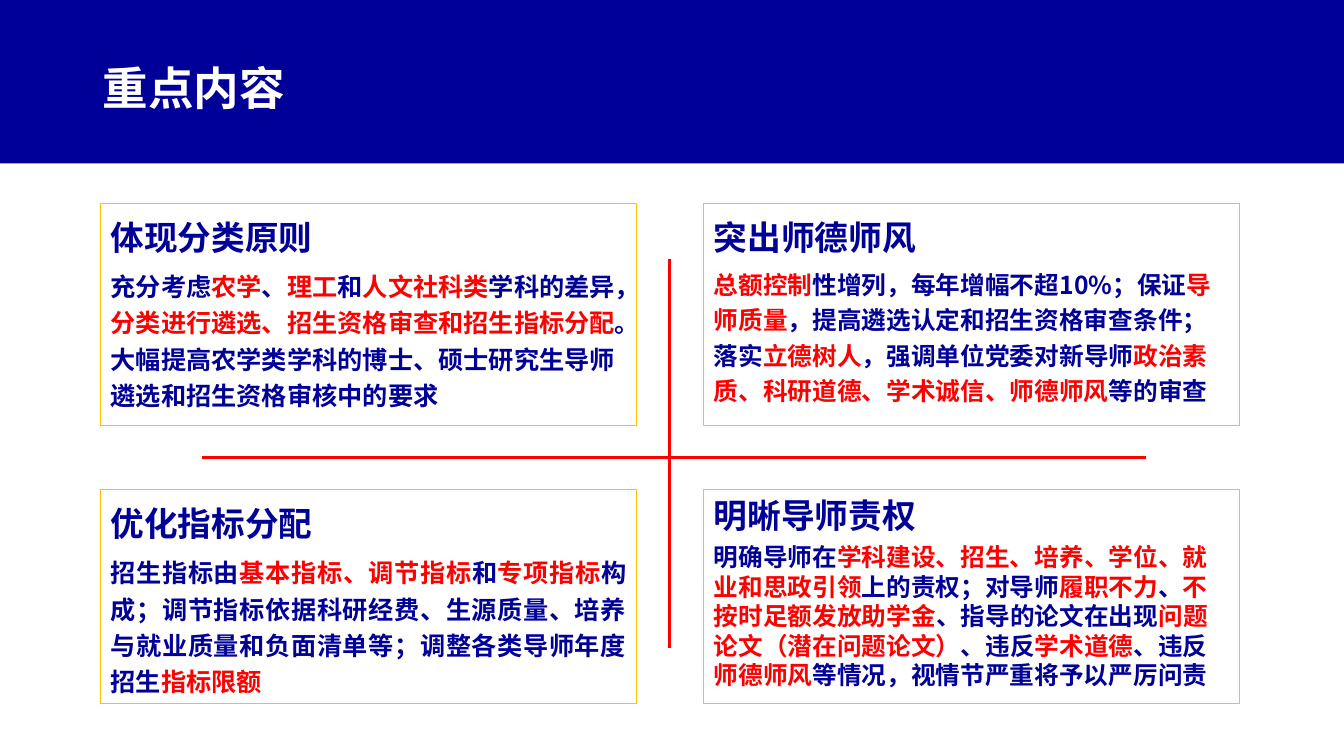
from dataclasses import dataclass

from lxml import etree
from pptx import Presentation
from pptx.dml.color import RGBColor
from pptx.enum.shapes import MSO_CONNECTOR, MSO_SHAPE
from pptx.enum.text import MSO_ANCHOR, PP_ALIGN
from pptx.oxml.ns import qn
from pptx.slide import Slide
from pptx.text.text import TextFrame, _Paragraph as Paragraph
from pptx.util import Inches, Pt

FONT = "Noto Sans CJK SC"
NAVY = RGBColor(0x00, 0x00, 0x99)
RED = RGBColor(0xFF, 0x00, 0x00)
GOLD = RGBColor(0xFF, 0xC0, 0x00)
WHITE = RGBColor(0xFF, 0xFF, 0xFF)

COLUMNS = (1, 6.98)
ROWS = ((2.02, 2.2), (4.86, 2.12))  # top, height
PANEL_WIDTH = 5.31


@dataclass(frozen=True)
class Panel:
    column: int
    row: int
    heading: str
    body: str  # "|" switches between navy and red, navy first
    heading_size: float = 24
    body_size: float = 18
    body_gap: float = 6
    line_spacing: float = 1.2
    align: PP_ALIGN = PP_ALIGN.LEFT


@dataclass(frozen=True)
class Axis:
    start: tuple[float, float]
    end: tuple[float, float]


PANELS = (
    Panel(0, 0, "体现分类原则",
          "充分考虑|农学|、|理工|和|人文社科类|学科的差异，|"
          "分类进行遴选、招生资格审查和招生指标分配|"
          "。大幅提高农学类学科的博士、硕士研究生导师遴选和招生资格审核中的要求"),
    Panel(1, 0, "突出师德师风",
          "|总额控制|性增列，每年增幅不超10%；保证|导师质量|"
          "，提高遴选认定和招生资格审查条件；落实|立德树人|，强调单位党委对新导师|"
          "政治素质、科研道德、学术诚信、师德师风|等的审查",
          heading_size=24.1, body_size=17.6, body_gap=4.8),
    Panel(0, 1, "优化指标分配",
          "招生指标由|基本指标、调节指标|和|专项指标|"
          "构成；调节指标依据科研经费、生源质量、培养与就业质量和负面清单等；"
          "调整各类导师年度招生|指标限额",
          align=PP_ALIGN.JUSTIFY),
    Panel(1, 1, "明晰导师责权",
          "明确导师在|学科建设、招生、培养、学位、就业和思政引领|上的责权；对导师|"
          "履职不力|、|不按时足额发放助学金|、指导的论文在出现|"
          "问题论文（潜在问题论文）|、违反|学术道德|、违反|师德师风|"
          "等情况，视情节严重将予以严厉问责",
          heading_size=24.1, body_size=17.6, body_gap=4.8, line_spacing=1.0),
)

AXES = (
    Axis((6.64, 2.57), (6.64, 6.43)),
    Axis((2, 4.54), (11.37, 4.54)),
)


def apply(target: object, values: dict) -> None:
    for name, value in values.items():
        setattr(target, name, value)


def add_run(paragraph: Paragraph, text: str, size: float, color: RGBColor) -> None:
    run = paragraph.add_run()
    run.text = text
    apply(run.font, {"name": FONT, "size": Pt(size), "bold": True})
    run.font.color.rgb = color
    east_asian = etree.SubElement(run.font._element, qn("a:ea"))
    east_asian.set("typeface", FONT)


def add_marked_text(paragraph: Paragraph, marked: str, size: float) -> None:
    """Write the "|"-separated parts in alternating navy and red."""
    for index, part in enumerate(marked.split("|")):
        if part:
            add_run(paragraph, part, size, RED if index % 2 else NAVY)


def add_banner(slide: Slide, title: str) -> None:
    band = slide.shapes.add_shape(
        MSO_SHAPE.RECTANGLE, 0, 0, Inches(13.33), Inches(1.62))
    band.shadow.inherit = False
    band.fill.solid()
    band.fill.fore_color.rgb = NAVY
    band.line.fill.background()

    caption = slide.shapes.add_textbox(
        Inches(0.92), Inches(0.4), Inches(11.5), Inches(0.99)).text_frame
    apply(caption, {"word_wrap": True, "vertical_anchor": MSO_ANCHOR.MIDDLE})
    paragraph = caption.paragraphs[0]
    paragraph.line_spacing = 0.9
    add_run(paragraph, title, 32.5, WHITE)


def fill_panel(frame: TextFrame, panel: Panel) -> None:
    apply(frame, {"word_wrap": True, "vertical_anchor": MSO_ANCHOR.TOP})
    heading, body = frame.paragraphs[0], frame.add_paragraph()
    for paragraph in (heading, body):
        apply(paragraph, {"alignment": panel.align,
                          "line_spacing": panel.line_spacing})
    body.space_before = Pt(panel.body_gap)
    add_marked_text(heading, panel.heading, panel.heading_size)
    add_marked_text(body, panel.body, panel.body_size)


def add_panel(slide: Slide, panel: Panel) -> None:
    top, height = ROWS[panel.row]
    box = slide.shapes.add_shape(
        MSO_SHAPE.RECTANGLE, Inches(COLUMNS[panel.column]), Inches(top),
        Inches(PANEL_WIDTH), Inches(height))
    box.shadow.inherit = False
    box.fill.background()
    box.line.color.rgb = GOLD
    box.line.width = Pt(0.75)
    fill_panel(box.text_frame, panel)


def add_axis(slide: Slide, axis: Axis) -> None:
    line = slide.shapes.add_connector(
        MSO_CONNECTOR.STRAIGHT, *map(Inches, axis.start + axis.end))
    line.line.color.rgb = RED
    line.line.width = Pt(2)
    etree.SubElement(line._element.spPr, qn("a:effectLst"))


def main() -> None:
    deck = Presentation()
    apply(deck, {"slide_width": Inches(13.33), "slide_height": Inches(7.5)})
    slide = deck.slides.add_slide(deck.slide_layouts[6])
    add_banner(slide, "重点内容")
    for panel in PANELS:
        add_panel(slide, panel)
    for axis in AXES:
        add_axis(slide, axis)
    deck.save("out.pptx")


if __name__ == "__main__":
    main()
